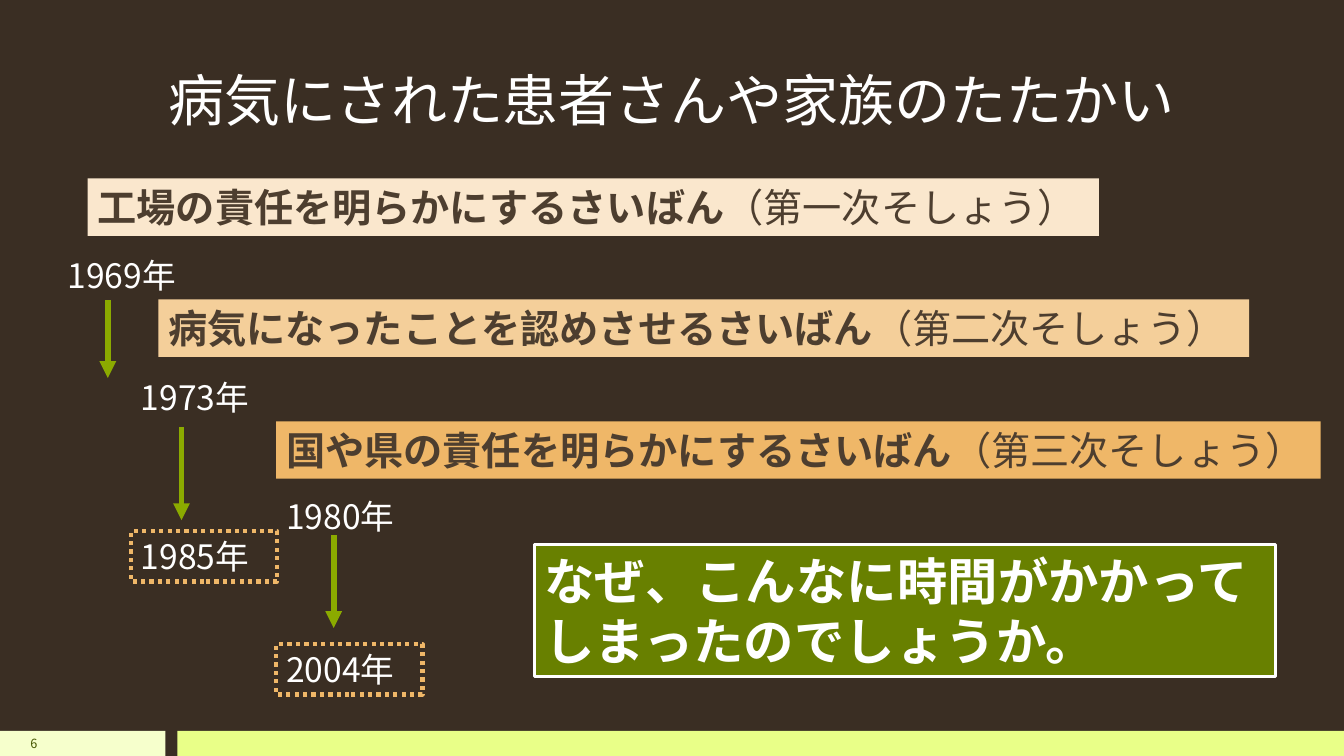
from lxml import etree
from pptx import Presentation
from pptx.dml.color import RGBColor
from pptx.enum.dml import MSO_LINE_DASH_STYLE as Dash
from pptx.enum.shapes import MSO_CONNECTOR as Connector, MSO_SHAPE as Shape
from pptx.enum.text import MSO_ANCHOR as Anchor, PP_ALIGN as Align
from pptx.oxml.ns import qn
from pptx.util import Inches, Pt

FONT = "Noto Sans CJK JP"
COLORS = {
    "background": "3A2E23", "text": "FFFFFF", "bar_text": "4D3E2F",
    "first": "FAE7CD", "second": "F4CF9A", "third": "EFB768",
    "arrow": "8BAA00", "question": "688000",
    "footer_short": "F6FFCC", "footer_long": "E9FF88", "page": "455500",
}
WIDTH, HEIGHT = 13.33, 7.5
FOOTER_TOP, FOOTER_HEIGHT = 7.25, 0.25
BAR_HEIGHT = 0.57
YEAR_WIDTH, YEAR_HEIGHT = 1.45, 0.5
# Left edges of the year columns
COLUMNS = (0.57, 1.3, 2.74)

# Lawsuit bars: left, top, width, colour, name, number
LAWSUITS = (
    (0.87, 1.77, 10.03, "first", "工場の責任を明らかにするさいばん", "一"),
    (1.57, 2.97, 10.82, "second", "病気になったことを認めさせるさいばん", "二"),
    (2.74, 4.18, 10.36, "third", "国や県の責任を明らかにするさいばん", "三"),
)
# Years: column, top, text, dotted frame
YEARS = (
    (0, 2.48, "1969年", False),
    (1, 3.69, "1973年", False),
    (2, 4.87, "1980年", False),
    (2, 6.39, "2004年", True),
    (1, 5.27, "1985年", True),
)
# Arrows: x, top, bottom
ARROWS = ((1.07, 2.98, 3.75), (1.8, 4.24, 5.16), (3.31, 5.31, 6.23))


def color(name):
    return RGBColor.from_string(COLORS[name])


def write(shape, runs, size, color_name, align=Align.LEFT, wrap=True):
    """Write (text, bold) runs as one paragraph."""
    frame = shape.text_frame
    frame.word_wrap = wrap
    frame.vertical_anchor = Anchor.MIDDLE
    paragraph = frame.paragraphs[0]
    paragraph.alignment = align
    paragraph.line_spacing = Pt(size * 1.2)
    for text, bold in runs:
        run = paragraph.add_run()
        run.text = text
        font = run.font
        font.name, font.size, font.bold = FONT, Pt(size), bold
        font.color.rgb = color(color_name)
        # Japanese glyphs take the East Asian font
        latin = run._r.rPr.find(qn("a:latin"))
        east_asian = etree.Element(qn("a:ea"), typeface=FONT)
        latin.addnext(east_asian)


def add_box(slide, box, fill=None, line=None, line_width=0, dash=None):
    shape = slide.shapes.add_shape(Shape.RECTANGLE, *map(Inches, box))
    shape.shadow.inherit = False
    if fill:
        shape.fill.solid()
        shape.fill.fore_color.rgb = color(fill)
    else:
        shape.fill.background()
    if line:
        shape.line.color.rgb = color(line)
        shape.line.width = Pt(line_width)
        if dash:
            shape.line.dash_style = dash
    else:
        shape.line.fill.background()
    return shape


def add_text(slide, box, text, size, color_name, align=Align.LEFT):
    shape = slide.shapes.add_textbox(*map(Inches, box))
    write(shape, [(text, False)], size, color_name, align)


def add_arrow(slide, x, top, bottom):
    arrow = slide.shapes.add_connector(
        Connector.STRAIGHT, *map(Inches, (x, top, x, bottom)))
    arrow.line.color.rgb = color("arrow")
    arrow.line.width = Pt(4)
    etree.SubElement(arrow.line._get_or_add_ln(), qn("a:tailEnd"), type="triangle")
    etree.SubElement(arrow._element.spPr, qn("a:effectLst"))


def add_title(slide, box, text):
    title = slide.shapes.title
    title.left, title.top, title.width, title.height = map(Inches, box)
    write(title, [(text, False)], 40, "text")


def add_footer(slide):
    gap_start, gap_end = 1.64, 1.76
    add_box(slide, (0, FOOTER_TOP, gap_start, FOOTER_HEIGHT), "footer_short")
    add_box(slide, (gap_end, FOOTER_TOP, WIDTH - gap_end, FOOTER_HEIGHT),
            "footer_long")
    add_text(slide, (0, FOOTER_TOP, 0.47, FOOTER_HEIGHT), "6", 9, "page",
             Align.RIGHT)


def add_year(slide, column, top, text, framed):
    box = (COLUMNS[column], top, YEAR_WIDTH, YEAR_HEIGHT)
    if framed:
        shape = add_box(slide, box, None, "third", 3, Dash.ROUND_DOT)
        write(shape, [(text, False)], 24, "text")
    else:
        add_text(slide, box, text, 24, "text")


def main():
    presentation = Presentation()
    presentation.slide_width = Inches(WIDTH)
    presentation.slide_height = Inches(HEIGHT)
    slide = presentation.slides.add_slide(presentation.slide_layouts[5])
    slide.background.fill.solid()
    slide.background.fill.fore_color.rgb = color("background")

    # Footer and title
    add_footer(slide)
    add_title(slide, (1.57, 0.6, 10.52, 0.77),
              "病気にされた患者さんや家族のたたかい")

    # Lawsuits and their timeline
    for left, top, width, fill, name, number in LAWSUITS:
        bar = add_box(slide, (left, top, width, BAR_HEIGHT), fill)
        write(bar, [(name, True), (f"（第{number}次そしょう）", False)],
              28, "bar_text")
    for year in YEARS:
        add_year(slide, *year)
    for arrow in ARROWS:
        add_arrow(slide, *arrow)

    # Closing question
    question = add_box(slide, (5.3, 5.4, 7.35, 1.31), "question", "text", 2)
    write(question, [("なぜ、こんなに時間がかかってしまったのでしょうか。", True)],
          36, "text")

    presentation.save("out.pptx")


if __name__ == "__main__":
    main()
